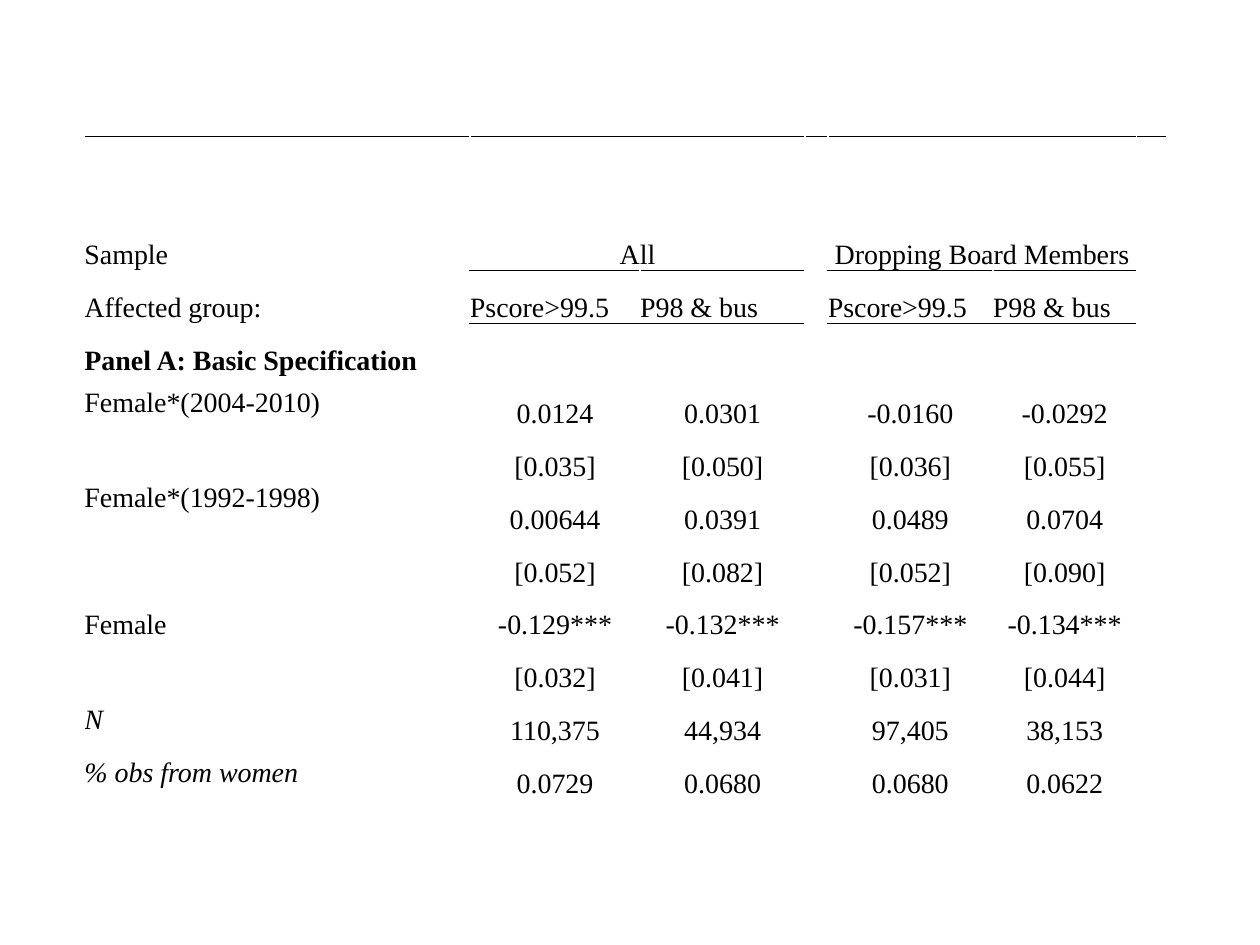
"""Build a slide with a regression table on female effects by sample."""
import pptx
import pptx.dml.color
import pptx.enum.text
import pptx.oxml
import pptx.oxml.ns
import pptx.util
from pptx.util import Inches

PP_ALIGN = pptx.enum.text.PP_ALIGN
ANCHOR = pptx.enum.text.MSO_ANCHOR


def rgb(value):
    return pptx.dml.color.RGBColor.from_string(value)


def add_border(cell, tag):
    cell._tc.get_or_add_tcPr().append(pptx.oxml.parse_xml(
        f'<a:{tag} {pptx.oxml.ns.nsdecls("a")} w="6350"><a:solidFill>'
        f'<a:srgbClr val="000000"/></a:solidFill></a:{tag}>'))


rows = [
    ["Sample", "All", "", "", "Dropping Board Members", "", ""],
    ["Affected group:", "Pscore>99.5", "P98 & bus", "", "Pscore>99.5", "P98 & bus", ""],
    ["Panel A: Basic Specification", "", "", "", "", "", ""],
    ["Female*(2004-2010)", "0.0124", "0.0301", "", "-0.0160", "-0.0292", ""],
    ["", "[0.035]", "[0.050]", "", "[0.036]", "[0.055]", ""],
    ["Female*(1992-1998)", "0.00644", "0.0391", "", "0.0489", "0.0704", ""],
    ["", "[0.052]", "[0.082]", "", "[0.052]", "[0.090]", ""],
    ["Female", "-0.129***", "-0.132***", "", "-0.157***", "-0.134***", ""],
    ["", "[0.032]", "[0.041]", "", "[0.031]", "[0.044]", ""],
    ["N", "110,375", "44,934", "", "97,405", "38,153", ""],
    ["% obs from women", "0.0729", "0.0680", "", "0.0680", "0.0622", ""],
]
widths = [3.06, 1.35, 1.31, 0.18, 1.31, 1.14, 0.24]
heights = [1.07] + [0.42] * 10
value_cols = (1, 2, 4, 5)
label_anchors = {3: ANCHOR.MIDDLE, 5: ANCHOR.TOP, 9: ANCHOR.MIDDLE, 10: ANCHOR.MIDDLE}
label_fonts = {2: {"bold": True}, 9: {"italic": True}, 10: {"italic": True}}
base_font = {"name": "Times New Roman", "size": pptx.util.Pt(16), "bold": False, "italic": False}
margins = ("margin_left", "margin_right", "margin_top", "margin_bottom")

prs = pptx.Presentation()
prs.slide_width, prs.slide_height = Inches(10), Inches(7.5)
s = prs.slides.add_slide(prs.slide_layouts[6])
sp = s.shapes.add_table(len(rows), len(widths), Inches(0.67), Inches(1.08),
                        Inches(sum(widths)), Inches(sum(heights)))
tbl = sp.table
tbl.first_row = tbl.horz_banding = False
for col, width in zip(tbl.columns, widths):
    col.width = Inches(width)
for row, height in zip(tbl.rows, heights):
    row.height = Inches(height)

for i, texts in enumerate(rows):
    for j, text in enumerate(texts):
        cell = tbl.cell(i, j)
        if i == 0 or (i <= 2 and j in value_cols):
            add_border(cell, "lnT")
        if i <= 1 and j in value_cols:
            add_border(cell, "lnB")
        cell.fill.background()
        for margin in margins:
            setattr(cell, margin, 0)
        cell.vertical_anchor = label_anchors.get(i, ANCHOR.BOTTOM) if j == 0 else ANCHOR.BOTTOM
        p = cell.text_frame.paragraphs[0]
        p.alignment = PP_ALIGN.CENTER if j and i != 1 else PP_ALIGN.LEFT
        font = p.font
        if text:
            r = p.add_run()
            r.text = text
            font = r.font
        style = base_font | (label_fonts.get(i, {}) if j == 0 else {})
        for key, value in style.items():
            setattr(font, key, value)
        font.color.rgb = rgb("000000")

for j in (1, 4):
    tbl.cell(0, j).merge(tbl.cell(0, j + 1))

prs.save("out.pptx")
